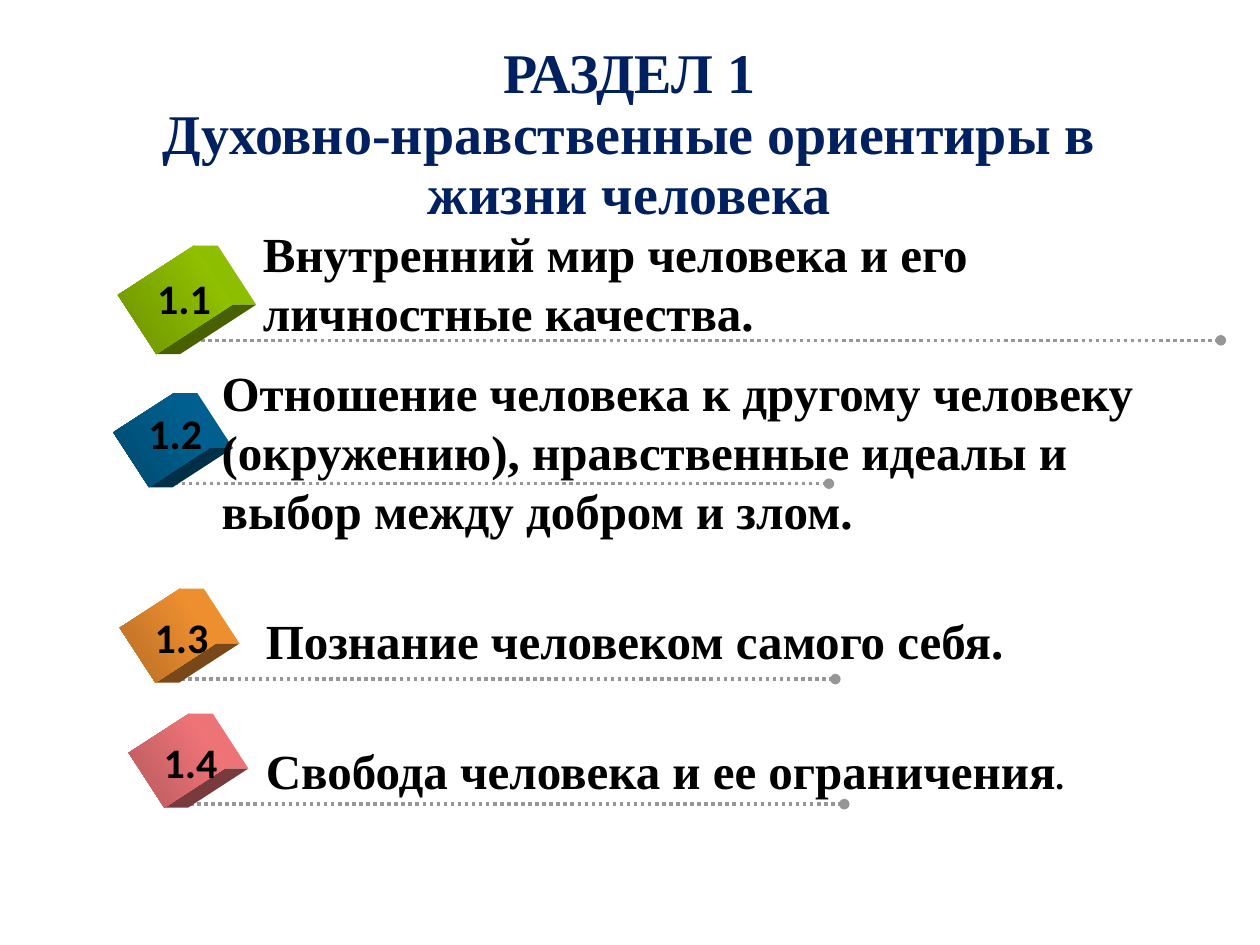
from dataclasses import dataclass
from math import cos, radians, sin

from lxml.etree import SubElement
from pptx import Presentation
from pptx.dml.color import RGBColor
from pptx.enum.dml import MSO_LINE
from pptx.enum.shapes import MSO_CONNECTOR, MSO_SHAPE
from pptx.enum.text import MSO_ANCHOR, MSO_AUTO_SIZE, PP_ALIGN
from pptx.oxml.ns import qn
from pptx.util import Cm, Pt


@dataclass(frozen=True)
class Theme:
    heading_font: str = "Times New Roman"
    label_font: str = "Calibri"
    title_color: str = "002060"
    text_color: str = "000000"
    line_color: str = "969696"
    title_size: int = 32
    text_size: int = 28
    label_size: int = 24
    stop_size: int = 20
    line_width: int = 2
    cube_angle: int = 57
    cube_depth: float = 0.48


@dataclass(frozen=True)
class Topic:
    """One numbered topic; boxes are (left, top, width, height) in cm."""
    number: str
    runs: tuple
    text_box: tuple
    colors: tuple
    cube: tuple
    label: tuple
    line: tuple
    wrap: bool = True
    label_wrap: bool = True


def topic_at(number, runs, text_box, colors, left, top, label_drop=0.12, label_width=1.6, **wraps):
    """Place the small cube, its label and its line from the cube's corner."""
    return Topic(number, runs, text_box, colors,
                 cube=(left, top, 1.32, 1.45),
                 label=(left + 0.15, top + label_drop, label_width, 1.3),
                 line=(left + 0.79, top + 1.6, 13.33), **wraps)


def shade(color, factor):
    return "".join(f"{round(int(color[i:i + 2], 16) * factor):02X}" for i in (0, 2, 4))


class SlideBuilder:
    def __init__(self, slide, theme):
        self.slide = slide
        self.theme = theme

    def add_run(self, paragraph, text, size, font=None, color=None):
        run = paragraph.add_run()
        run.text = text
        run.font.name = font or self.theme.heading_font
        run.font.size = Pt(size)
        run.font.bold = True
        run.font.color.rgb = RGBColor.from_string(color or self.theme.text_color)

    def add_title(self, lines, box):
        title = self.slide.shapes.title
        title.left, title.top, title.width, title.height = map(Cm, box)
        frame = title.text_frame
        frame.auto_size = MSO_AUTO_SIZE.NONE
        frame.vertical_anchor = MSO_ANCHOR.MIDDLE
        paragraph = frame.paragraphs[0]
        paragraph.alignment = PP_ALIGN.CENTER
        paragraph.line_spacing = 0.9
        for index, line in enumerate(lines):
            if index:
                paragraph.add_line_break()
            self.add_run(paragraph, line, self.theme.title_size, color=self.theme.title_color)

    def add_text(self, runs, box, wrap, font=None):
        frame = self.slide.shapes.add_textbox(*map(Cm, box)).text_frame
        frame.word_wrap = wrap
        frame.auto_size = MSO_AUTO_SIZE.SHAPE_TO_FIT_TEXT
        for text, size in runs:
            self.add_run(frame.paragraphs[0], text, size, font)

    def add_dotted_line(self, left, top, length):
        connector = self.slide.shapes.add_connector(
            MSO_CONNECTOR.STRAIGHT, Cm(left), Cm(top), Cm(left + length), Cm(top))
        connector.line.color.rgb = RGBColor.from_string(self.theme.line_color)
        connector.line.width = Pt(self.theme.line_width)
        connector.line.dash_style = MSO_LINE.ROUND_DOT
        properties = connector.element.spPr
        SubElement(properties.find(qn("a:ln")), qn("a:tailEnd"), type="oval")
        SubElement(properties, qn("a:effectLst"))

    def add_face(self, points, color):
        corners = [(Cm(x), Cm(y)) for x, y in points]
        builder = self.slide.shapes.build_freeform(*corners[0])
        builder.add_line_segments(corners[1:], close=True)
        face = builder.convert_to_shape()
        face.shadow.inherit = False
        face.fill.solid()
        face.fill.fore_color.rgb = RGBColor.from_string(color)
        face.line.fill.background()

    def add_cube(self, box, colors):
        """Turned gradient square with two side faces pushed out to the right."""
        left, top, width, height = box
        angle = radians(self.theme.cube_angle)

        def corner(across, down):
            x, y = across * width / 2, down * height / 2
            return (left + width / 2 + x * cos(angle) - y * sin(angle),
                    top + height / 2 + x * sin(angle) + y * cos(angle))

        def pushed(point):
            return point[0] + self.theme.cube_depth, point[1]

        upper, right, lower = corner(-1, -1), corner(1, -1), corner(1, 1)
        for start, end, factor in ((upper, right, 0.93), (right, lower, 0.47)):
            self.add_face((start, pushed(start), pushed(end), end), shade(colors[0], factor))

        front = self.slide.shapes.add_shape(MSO_SHAPE.RECTANGLE, *map(Cm, box))
        front.rotation = self.theme.cube_angle
        front.shadow.inherit = False
        front.line.fill.background()
        front.fill.gradient()
        front.fill.gradient_angle = 270
        for stop, color in zip(front.fill.gradient_stops, colors):
            stop.color.rgb = RGBColor.from_string(color)

    def add_topic(self, topic):
        self.add_dotted_line(*topic.line)
        self.add_cube(topic.cube, topic.colors)
        self.add_text([(topic.number, self.theme.label_size)], topic.label,
                      topic.label_wrap, self.theme.label_font)
        self.add_text(topic.runs, topic.text_box, topic.wrap)


def main():
    theme = Theme()
    presentation = Presentation()
    presentation.slide_width, presentation.slide_height = Cm(25.4), Cm(19.05)
    slide = presentation.slides.add_slide(presentation.slide_layouts[5])
    builder = SlideBuilder(slide, theme)
    builder.add_title(("РАЗДЕЛ 1", "Духовно-нравственные ориентиры в жизни человека"),
                      (1.73, 1.5, 21.92, 2.49))

    size = theme.text_size
    topics = (
        Topic("1.1", (("Внутренний мир человека и его личностные качества.", size),),
              (5.05, 4.39, 18.42, 2.64), ("99CC00", "6D9200"),
              cube=(2.82, 5.13, 1.42, 1.83), label=(2.92, 5.36, 1.7, 1.3),
              line=(3.91, 6.86, 20.7)),
        topic_at("1.2", (("Отношение человека к другому человеку (окружению), "
                          "нравственные идеалы и выбор между добром и злом.", size),),
                 (4.22, 7.19, 19.05, 3.84), ("006699", "00496D"), 2.59, 8.15,
                 label_drop=-0.05, label_width=2.21),
        topic_at("1.3", (("Познание человеком самого себя.", size),),
                 (5.11, 12.19, 15.54, 1.45), ("FF9933", "B66D24"), 2.72, 12.09,
                 wrap=False, label_wrap=False),
        topic_at("1.4", (("Свобода человека и ее ограничения", size), (".", theme.stop_size)),
                 (5.11, 14.81, 16.76, 1.45), ("FF7C80", "B6595C"), 2.9, 14.61,
                 wrap=False, label_wrap=False),
    )
    for topic in topics:
        builder.add_topic(topic)
    presentation.save("out.pptx")


if __name__ == "__main__":
    main()
